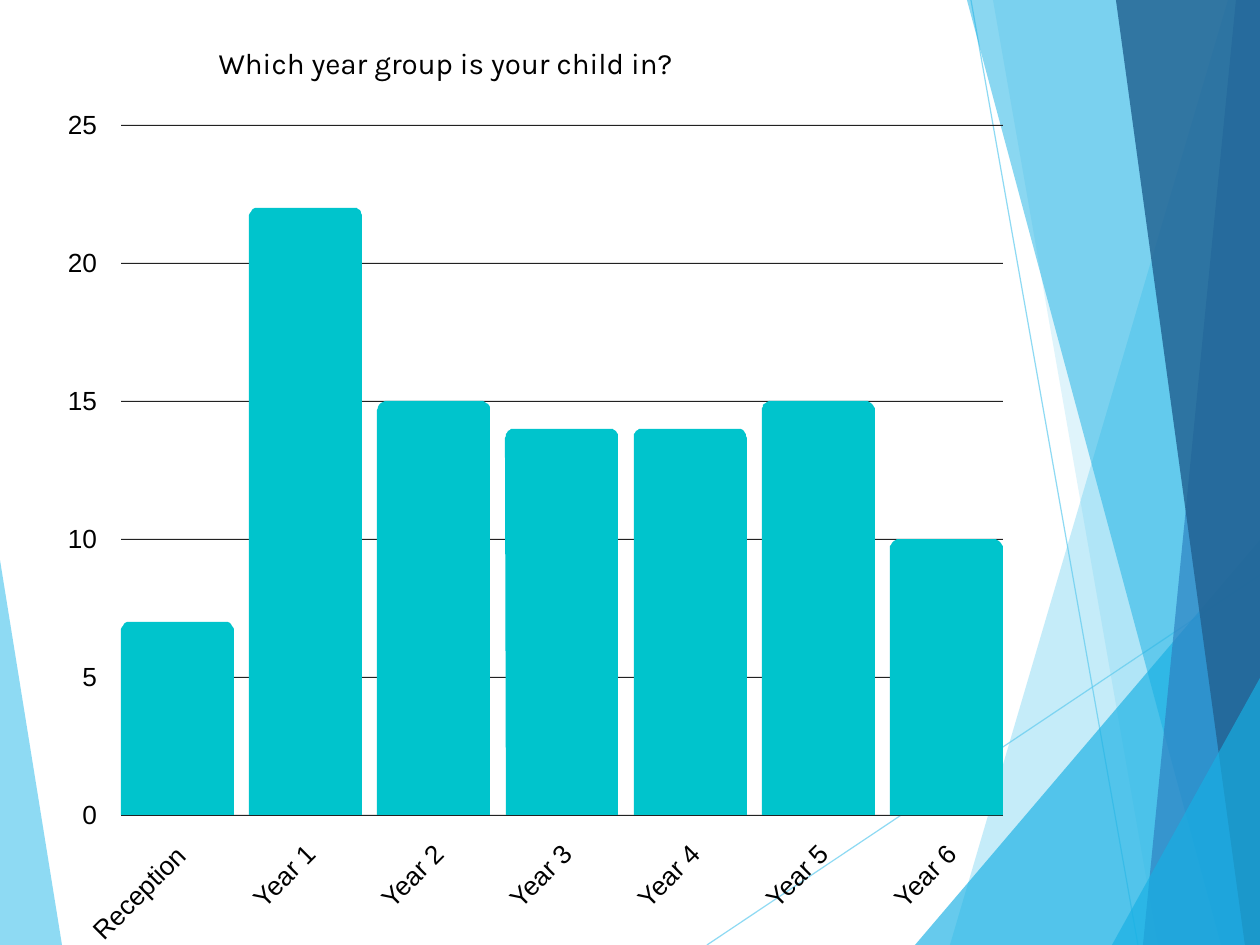
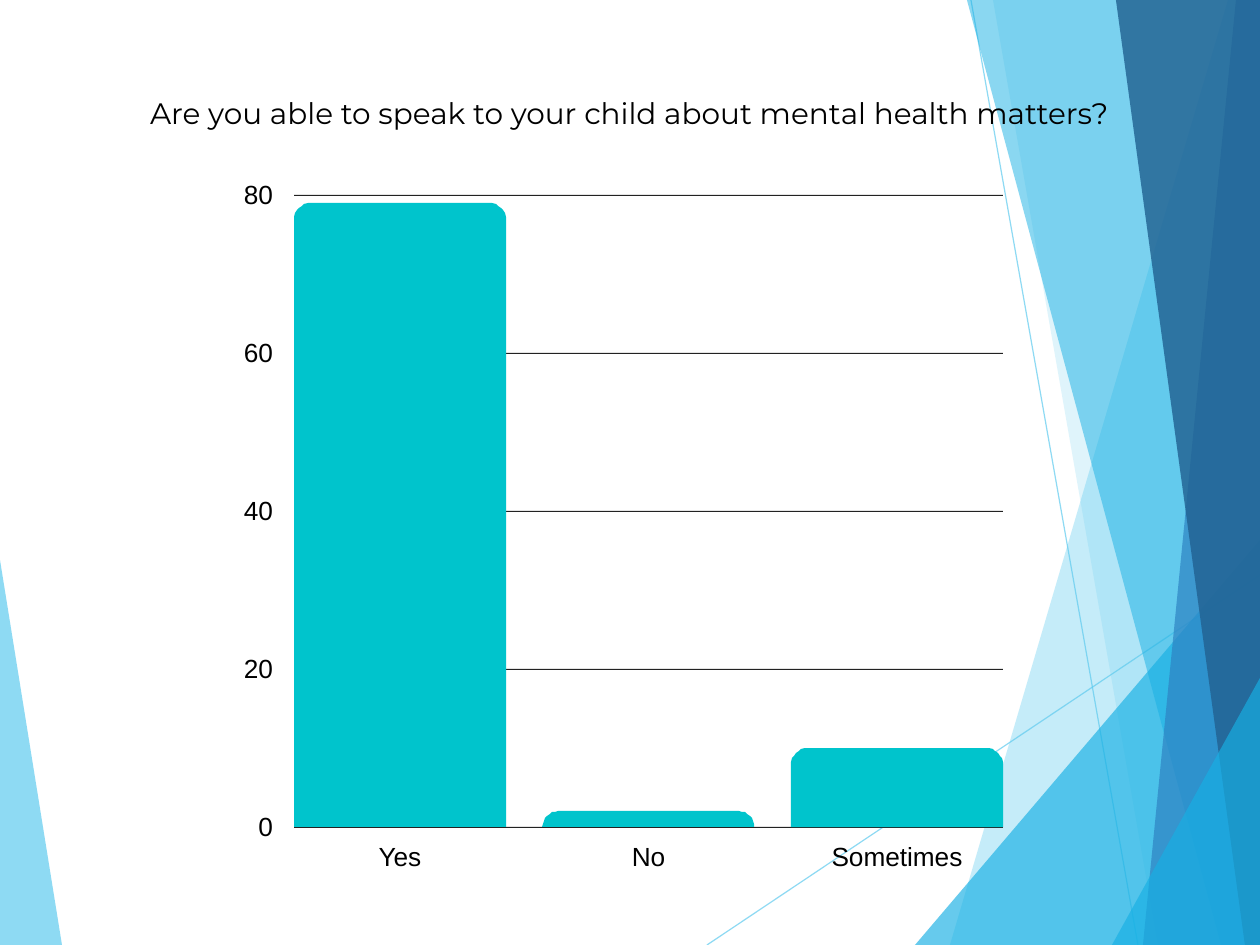
import math

from lxml import etree
from pptx import Presentation
from pptx import util as u
from pptx.dml.color import RGBColor
from pptx.enum import shapes, text
from pptx.oxml.ns import qn

SCALE = 7741  # EMU in one px
WIDTH, HEIGHT = 1260, 945
COLOURS = {
    "sky": "5FCBEF",
    "azure": "17B0E4",
    "blue": "2E83C3",
    "navy": "226292",
    "bar": "00C4CC",
    "grid": "222222",
    "ink": "000000",
}
LEFT, CENTRE, RIGHT = text.PP_ALIGN.LEFT, text.PP_ALIGN.CENTER, text.PP_ALIGN.RIGHT
LABEL = {"font": "Arial", "size": 16, "spacing": 22.4}
LABEL_HEIGHT = 39

# Background facets, back to front: corners in px, colour, opacity in percent
LEFT_FACET = ([(0, 560), (62, HEIGHT), (0, HEIGHT)], "sky", 70)
RAYS = [((707, HEIGHT), (WIDTH, 575)), ((971, 0), (1138, HEIGHT))]
# Right-hand bands: top x, bottom x, colour, opacity
BANDS = [
    (1228, 950, "sky", 36),
    (993, 1158, "sky", 20),
    (540, 915, "azure", 66),
    (967, 1221, "azure", 50),
    (1236, 1143, "blue", 70),
    (1116, 1245, "navy", 82),
    (678, 1112, "azure", 66),
]
TRIANGLES = (2, 6)  # bands whose first number is a height on the right edge


def px(length):
    return u.Emu(round(length * SCALE))


def colour(name):
    return RGBColor.from_string(COLOURS[name])


def write(frame, words, font, size=18, align=LEFT, spacing=None):
    """Put one formatted line of text into a text frame."""
    para = frame.paragraphs[0]
    para.alignment = align
    if spacing:
        para.line_spacing = u.Pt(spacing)
    span = para.add_run()
    span.text = words
    span.font.name = font
    span.font.size = u.Pt(size)
    span.font.color.rgb = colour("ink")


class Survey:
    """Shared style and the current page."""

    def __init__(self):
        self.deck = Presentation()
        self.deck.slide_width, self.deck.slide_height = px(WIDTH), px(HEIGHT)
        self.layout = self.deck.slide_layouts[6]
        for holder in list(self.layout.placeholders):
            holder.element.getparent().remove(holder.element)
        self.page = None

    def new_page(self):
        self.page = self.deck.slides.add_slide(self.layout)

    def paint(self, shape, tint):
        shape.shadow.inherit = False
        shape.fill.solid()
        shape.fill.fore_color.rgb = colour(tint)
        shape.line.fill.background()

    def fade(self, shape, opacity):
        for tint in shape.element.xpath("./p:spPr//a:srgbClr"):
            etree.SubElement(tint, qn("a:alpha"), val=str(opacity * 1000))

    def polygon(self, corners, tint):
        outline = self.page.shapes.build_freeform(*corners[0], scale=SCALE)
        outline.add_line_segments(corners[1:], close=True)
        shape = outline.convert_to_shape()
        self.paint(shape, tint)
        return shape

    def facet(self, corners, tint, opacity):
        self.fade(self.polygon(corners, tint), opacity)

    def ray(self, start, end):
        line = self.page.shapes.add_connector(
            shapes.MSO_CONNECTOR.STRAIGHT, *map(px, start + end))
        line.line.color.rgb = colour("sky")
        line.line.width = u.Pt(0.75)
        etree.SubElement(line.element.spPr, qn("a:effectLst"))
        self.fade(line, 70)

    def background(self):
        """Draw the facets on the page, then hand them to the layout."""
        self.facet(*LEFT_FACET)
        for start, end in RAYS:
            self.ray(start, end)
        for index, (top, bottom, tint, opacity) in enumerate(BANDS):
            if index in TRIANGLES:
                corners = [(bottom, HEIGHT), (WIDTH, top), (WIDTH, HEIGHT)]
            else:
                corners = [(top, 0), (bottom, HEIGHT), (WIDTH, HEIGHT), (WIDTH, 0)]
            self.facet(corners, tint, opacity)
        for shape in list(self.page.shapes):
            self.layout.shapes.element.append(shape.element)

    def words(self, content, area, inset=False, turn=0, **style):
        box = self.page.shapes.add_textbox(*map(px, area))
        box.rotation = turn
        frame = box.text_frame
        frame.word_wrap = True
        if not inset:
            frame.margin_left = frame.margin_right = 0
            frame.margin_top = frame.margin_bottom = 0
        write(frame, content, **style)

    def bar(self, left, base, width, height):
        """Column with rounded upper corners."""
        radius = min(0.08 * width, height)
        top = base - height
        corners = [(left, base)]
        for centre, start in ((left + radius, 180), (left + width - radius, 90)):
            for step in range(9):
                angle = math.radians(start - step * 90 / 8)
                corners.append((centre + radius * math.cos(angle),
                                top + radius - radius * math.sin(angle)))
        self.polygon(corners + [(left + width, base)], "bar")

    def grid_line(self, left, y, width):
        line = self.page.shapes.add_shape(
            shapes.MSO_SHAPE.RECTANGLE, *map(px, (left, y, width, 1)))
        self.paint(line, "grid")

    def slanted_label(self, name, middle, base):
        """Label turned by 45 degrees, its end under the middle of the bar."""
        width = 16 * len(name) + 1
        reach = width / 2 * math.sin(math.radians(45))
        area = (middle + 11 - reach - width / 2,
                base + 25 + reach - LABEL_HEIGHT / 2, width, LABEL_HEIGHT)
        self.words(name, area, turn=315, align=CENTRE, **LABEL)

    def bar_chart(self, answers, plot, bar_width, top, step, gap, slanted=False):
        """Plot is left, top, width, height; gap parts the scale from it."""
        left, ceiling, width, height = plot
        base = ceiling + height
        pitch = (width - bar_width) / (len(answers) - 1)
        starts = [left + index * pitch for index in range(len(answers))]

        # Category labels
        for name, start in zip(answers, starts):
            if slanted:
                self.slanted_label(name, start + bar_width / 2, base)
            else:
                self.words(name, (start, base + 8, bar_width, LABEL_HEIGHT),
                           align=CENTRE, **LABEL)

        # Grid lines, then the scale
        marks = {mark: base - mark * height / top for mark in range(top, -1, -step)}
        for y in marks.values():
            self.grid_line(left, y, width)
        for mark, y in marks.items():
            self.words(str(mark), (left - gap - 45, y - 22, 45, LABEL_HEIGHT),
                       align=RIGHT, **LABEL)

        # Bars
        for value, start in zip(answers.values(), starts):
            self.bar(start, base, bar_width, value * height / top)


def main():
    survey = Survey()

    # Year groups
    survey.new_page()
    survey.background()
    years = dict(zip((f"Year {n}" for n in range(1, 7)), (22, 15, 14, 14, 15, 10)))
    survey.bar_chart({"Reception": 7, **years}, plot=(121, 125, 882, 690),
                     bar_width=113, top=25, step=5, gap=24, slanted=True)
    survey.words("Which year group is your child in?", (207, 39, 683, 47),
                 inset=True, font="Karla")

    # Talking about mental health
    survey.new_page()
    survey.bar_chart({"Yes": 79, "No": 2, "Sometimes": 10}, plot=(294, 195, 709, 632),
                     bar_width=212, top=80, step=20, gap=21)
    survey.words("Are you able to speak to your child about mental health matters?",
                 (61, 89, 1137, 37), font="Montserrat", align=CENTRE, spacing=25.2)

    survey.deck.save("out.pptx")


if __name__ == "__main__":
    main()
